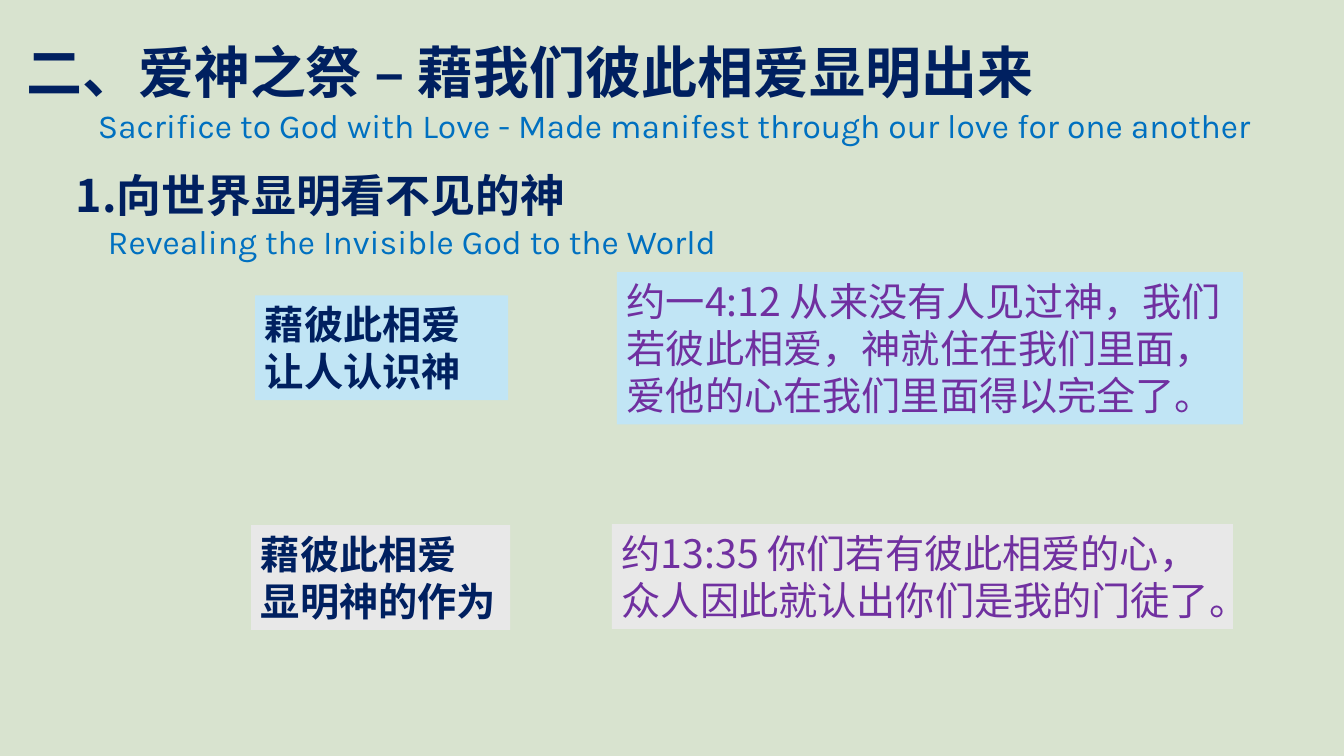
import dataclasses
import typing

import pptx
import pptx.dml.color
import pptx.enum.shapes
import pptx.enum.text
import pptx.oxml.ns
import pptx.util
from lxml import etree

SLIDE_WIDTH = pptx.util.Inches(13.33)
SLIDE_HEIGHT = pptx.util.Inches(7.5)
CHINESE_FONT = "Noto Sans CJK SC"
ENGLISH_FONT = "Karla"
SAGE, SKY, GREY = "D8E3CF", "C1E5F5", "E8E8E8"
NAVY, BLUE, PURPLE = "002060", "0070C0", "7030A0"


@dataclasses.dataclass(frozen=True)
class Area:
    """Position and size in percent of the slide's width and height."""

    left: float
    top: float
    width: float
    height: float


@dataclasses.dataclass(frozen=True)
class Heading:
    """A Chinese heading with its indented English translation."""

    area: Area
    chinese: str
    english: str
    size: int
    indent: float


@dataclasses.dataclass(frozen=True)
class Panel:
    """A filled box of text."""

    area: Area
    lines: tuple[str, ...]
    fill: str
    color: str
    bold: bool


HEADINGS = (
    Heading(Area(1.2, 4.27, 97.43, 15.73), "二、爱神之祭 – 藉我们彼此相爱显明出来",
            "Sacrifice to God with Love - Made manifest through our love for one another", 40, 5.33),
    Heading(Area(4.88, 21.47, 83.63, 13.87), "1.向世界显明看不见的神",
            "Revealing the Invisible God to the World", 32, 2.4),
)

PANELS = (
    Panel(Area(45.9, 36, 46.58, 20.13),
          ("约一4:12 从来没有人见过神，我们若彼此相爱，神就住在我们里面，爱他的心在我们里面得以完全了。",),
          SKY, PURPLE, False),
    Panel(Area(45.53, 69.33, 46.2, 13.87),
          ("约13:35 你们若有彼此相爱的心，众人因此就认出你们是我的门徒了。",), GREY, PURPLE, False),
    Panel(Area(18.68, 69.47, 19.28, 13.87), ("藉彼此相爱", "显明神的作为"), GREY, NAVY, True),
    Panel(Area(18.98, 39.07, 18.83, 13.87), ("藉彼此相爱让人认识神",), SKY, NAVY, True),
)


def across(percent: float) -> int:
    """Convert a share of the slide's width to a length."""
    return round(SLIDE_WIDTH * percent / 100)


def down(percent: float) -> int:
    """Convert a share of the slide's height to a length."""
    return round(SLIDE_HEIGHT * percent / 100)


def bounds(area: Area) -> tuple[int, int, int, int]:
    """Return left, top, width and height as lengths."""
    return across(area.left), down(area.top), across(area.width), down(area.height)


def paint(target: typing.Any, color: str) -> None:
    """Give a fill a solid colour from a hex string."""
    target.solid()
    target.fore_color.rgb = pptx.dml.color.RGBColor.from_string(color)


def prepare_frame(shape: typing.Any) -> typing.Any:
    """Set wrapping, anchor and fitting of a shape's text frame."""
    frame = shape.text_frame
    frame.word_wrap = True
    frame.vertical_anchor = pptx.enum.text.MSO_ANCHOR.TOP
    frame.auto_size = pptx.enum.text.MSO_AUTO_SIZE.SHAPE_TO_FIT_TEXT
    return frame


def write(paragraph: typing.Any, text: str, *, size: int, color: str, bold: bool = False,
          font: str = CHINESE_FONT, indent: float = 0) -> None:
    """Write one left-aligned paragraph without a bullet."""
    properties = paragraph._p.get_or_add_pPr()
    properties.set("marL", str(across(indent)))
    properties.set("indent", "0")
    etree.SubElement(properties, pptx.oxml.ns.qn("a:buNone"))
    paragraph.alignment = pptx.enum.text.PP_ALIGN.LEFT
    paragraph.line_spacing = 1.0
    paragraph.space_before = pptx.util.Pt(0)
    run = paragraph.add_run()
    run.text = text
    run.font.size = pptx.util.Pt(size)
    run.font.bold = bold
    run.font.name = font
    paint(run.font.fill, color)
    east_asian = etree.SubElement(run._r.get_or_add_rPr(), pptx.oxml.ns.qn("a:ea"))
    east_asian.set("typeface", font)


def fill_heading(shape: typing.Any, heading: Heading) -> None:
    """Move a placeholder and write a heading in both languages."""
    shape.left, shape.top, shape.width, shape.height = bounds(heading.area)
    frame = prepare_frame(shape)
    write(frame.paragraphs[0], heading.chinese, size=heading.size, color=NAVY, bold=True)
    write(frame.add_paragraph(), heading.english, size=24, color=BLUE, font=ENGLISH_FONT,
          indent=heading.indent)


def add_panel(slide: typing.Any, panel: Panel) -> None:
    """Draw a filled box with its lines of text."""
    shape = slide.shapes.add_shape(pptx.enum.shapes.MSO_SHAPE.RECTANGLE, *bounds(panel.area))
    shape.shadow.inherit = False
    shape.line.fill.background()
    paint(shape.fill, panel.fill)
    frame = prepare_frame(shape)
    for index, line in enumerate(panel.lines):
        paragraph = frame.add_paragraph() if index else frame.paragraphs[0]
        write(paragraph, line, size=28, color=panel.color, bold=panel.bold)


def main() -> None:
    """Build the slide and save it."""
    presentation = pptx.Presentation()
    presentation.slide_width = SLIDE_WIDTH
    presentation.slide_height = SLIDE_HEIGHT
    slide = presentation.slides.add_slide(presentation.slide_layouts[1])
    paint(slide.background.fill, SAGE)
    paint(slide.shapes.title.fill, SAGE)
    for placeholder, heading in zip(slide.placeholders, HEADINGS):
        fill_heading(placeholder, heading)
    for panel in PANELS:
        add_panel(slide, panel)
    presentation.save("out.pptx")


if __name__ == "__main__":
    main()
